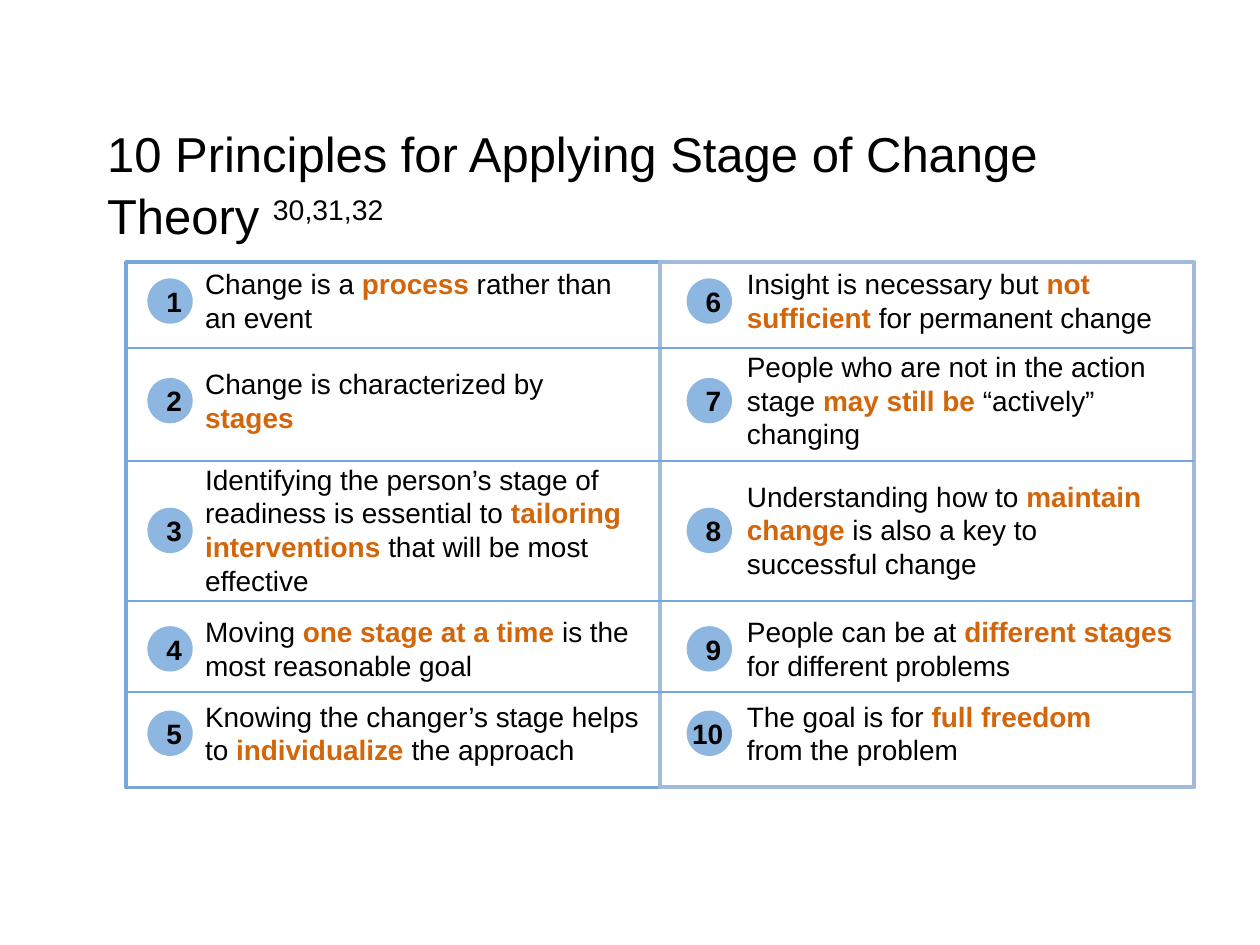
from lxml import etree
from pptx import Presentation
from pptx.dml.color import RGBColor
from pptx.enum.shapes import MSO_CONNECTOR, MSO_SHAPE
from pptx.enum.text import MSO_ANCHOR, MSO_AUTO_SIZE, PP_ALIGN
from pptx.oxml.ns import qn
from pptx.util import Inches, Pt

RECTANGLE, OVAL = MSO_SHAPE.RECTANGLE, MSO_SHAPE.OVAL
STRAIGHT = MSO_CONNECTOR.STRAIGHT
TOP, MIDDLE = MSO_ANCHOR.TOP, MSO_ANCHOR.MIDDLE
LEFT, CENTER = PP_ALIGN.LEFT, PP_ALIGN.CENTER
NO_FIT, GROW = MSO_AUTO_SIZE.NONE, MSO_AUTO_SIZE.SHAPE_TO_FIT_TEXT

# Content: each principle is (text, lines, box width); * surrounds emphasis
TITLE, CITATIONS = "10 Principles for Applying Stage of Change Theory ", "30,31,32"
COLUMNS = [
    [
        ("Change is a *process* rather than an event", 2, 3.73),
        ("Change is characterized by *stages*", 2, 3.55),
        ("Identifying the person’s stage of readiness is essential to "
         "*tailoring interventions* that will be most effective", 4, 3.71),
        ("Moving *one stage at a time *is the most reasonable goal", 2, 3.73),
        ("Knowing the changer’s stage helps to *individualize* the approach", 2, 3.73),
    ],
    [
        ("Insight is necessary but *not sufficient *for permanent change", 2, 3.66),
        ("People who are not in the action stage *may still be *“actively” changing", 3, 3.66),
        ("Understanding how to *maintain change* is also a key to successful change", 3, 3.51),
        ("People can be at *different stages *for different problems", 2, 3.72),
        ("The goal is for *full freedom *from the problem", 2, 3.26),
    ],
]

THEME = {
    "font": "Arial", "title_size": 28, "body_size": 16,
    "text": "000000", "accent": "D3650B", "panel": "FFFFFF", "badge": "8DB7E1",
    "rule": "75A7DD", "borders": [("75A7DD", 2), ("A1BBDB", 2.25)],
}

# Layout in inches
PANEL_LEFT, PANEL_TOP, PANEL_WIDTH, PANEL_HEIGHT = 1, 2.08, 4.24, 4.17
ROW_CENTERS = [2.39, 3.18, 4.21, 5.15, 5.82]
RULE_TOPS = [2.76, 3.66, 4.77, 5.49]
BADGE_LEFTS, TEXT_LEFTS = [1.17, 5.45], [1.53, 5.83]
BADGE, LINE_HEIGHT, PADDING = 0.36, 0.27, 0.1


def color(name):
    return RGBColor.from_string(THEME.get(name, name))


def set_values(target, values):
    for name, value in values.items():
        setattr(target, name, value)


def add_run(paragraph, text, size="body_size", shade="text", bold=False):
    run = paragraph.add_run()
    run.text = text
    set_values(run.font, {"name": THEME["font"], "size": Pt(THEME[size]), "bold": bold})
    run.font.color.rgb = color(shade)
    return run


def add_shape(slide, kind, box, fill, border=None):
    shape = slide.shapes.add_shape(kind, *map(Inches, box))
    shape.shadow.inherit = False
    shape.fill.solid()
    shape.fill.fore_color.rgb = color(fill)
    if border:
        shape.line.color.rgb, shape.line.width = color(border[0]), Pt(border[1])
    else:
        shape.line.fill.background()
    return shape


def add_text_box(slide, left, middle, width, lines, wrap=True):
    height = lines * LINE_HEIGHT + PADDING
    box = slide.shapes.add_textbox(*map(Inches, (left, middle - height / 2, width, height)))
    set_values(box.text_frame, {"word_wrap": wrap, "auto_size": GROW})
    return box.text_frame.paragraphs[0]


def add_title(slide):
    title = slide.shapes.title
    set_values(title, {"left": Inches(0.75), "top": Inches(0.89),
                       "width": Inches(8.75), "height": Inches(0.92)})
    set_values(title.text_frame, {"vertical_anchor": TOP, "auto_size": NO_FIT,
                                  "word_wrap": True, "margin_top": Inches(0.07)})
    paragraph = title.text_frame.paragraphs[0]
    set_values(paragraph, {"alignment": LEFT, "line_spacing": 1.05})
    add_run(paragraph, TITLE, "title_size")
    citation = add_run(paragraph, CITATIONS, "title_size")
    citation.font._element.set("baseline", "30000")


def add_badge(slide, number, left, middle):
    shape = add_shape(slide, OVAL, (left, middle - BADGE / 2, BADGE, BADGE), "badge")
    if number < 10:
        shape.text_frame.vertical_anchor = MIDDLE
        paragraph = shape.text_frame.paragraphs[0]
    else:  # two digits need more room than the circle gives
        paragraph = add_text_box(slide, left - 0.06, middle, 0.45, 1, wrap=False)
    paragraph.alignment = CENTER
    add_run(paragraph, str(number), bold=True)


def add_principle(slide, text, left, middle, width, lines):
    paragraph = add_text_box(slide, left, middle, width, lines)
    for index, part in enumerate(text.split("*")):
        emphasis = index % 2 == 1
        if part:
            add_run(paragraph, part, shade="accent" if emphasis else "text", bold=emphasis)


def add_rule(slide, top):
    right = PANEL_LEFT + 2 * PANEL_WIDTH
    rule = slide.shapes.add_connector(STRAIGHT, *map(Inches, (PANEL_LEFT, top, right, top)))
    rule.line.color.rgb, rule.line.width = color("rule"), Pt(1)
    etree.SubElement(rule._element.spPr, qn("a:effectLst"))


def main():
    presentation = Presentation()
    presentation.slide_width, presentation.slide_height = Inches(10), Inches(7.5)
    slide = presentation.slides.add_slide(presentation.slide_layouts[5])
    add_title(slide)

    # Panels
    for column, border in enumerate(THEME["borders"]):
        left = PANEL_LEFT + column * PANEL_WIDTH
        add_shape(slide, RECTANGLE, (left, PANEL_TOP, PANEL_WIDTH, PANEL_HEIGHT), "panel", border)

    # Numbered principles
    for column, principles in enumerate(COLUMNS):
        for row, (text, lines, width) in enumerate(principles):
            middle = ROW_CENTERS[row]
            add_principle(slide, text, TEXT_LEFTS[column], middle, width, lines)
            number = column * len(ROW_CENTERS) + row + 1
            add_badge(slide, number, BADGE_LEFTS[column], middle)

    # Row rules
    for top in RULE_TOPS:
        add_rule(slide, top)

    presentation.save("out.pptx")


if __name__ == "__main__":
    main()
